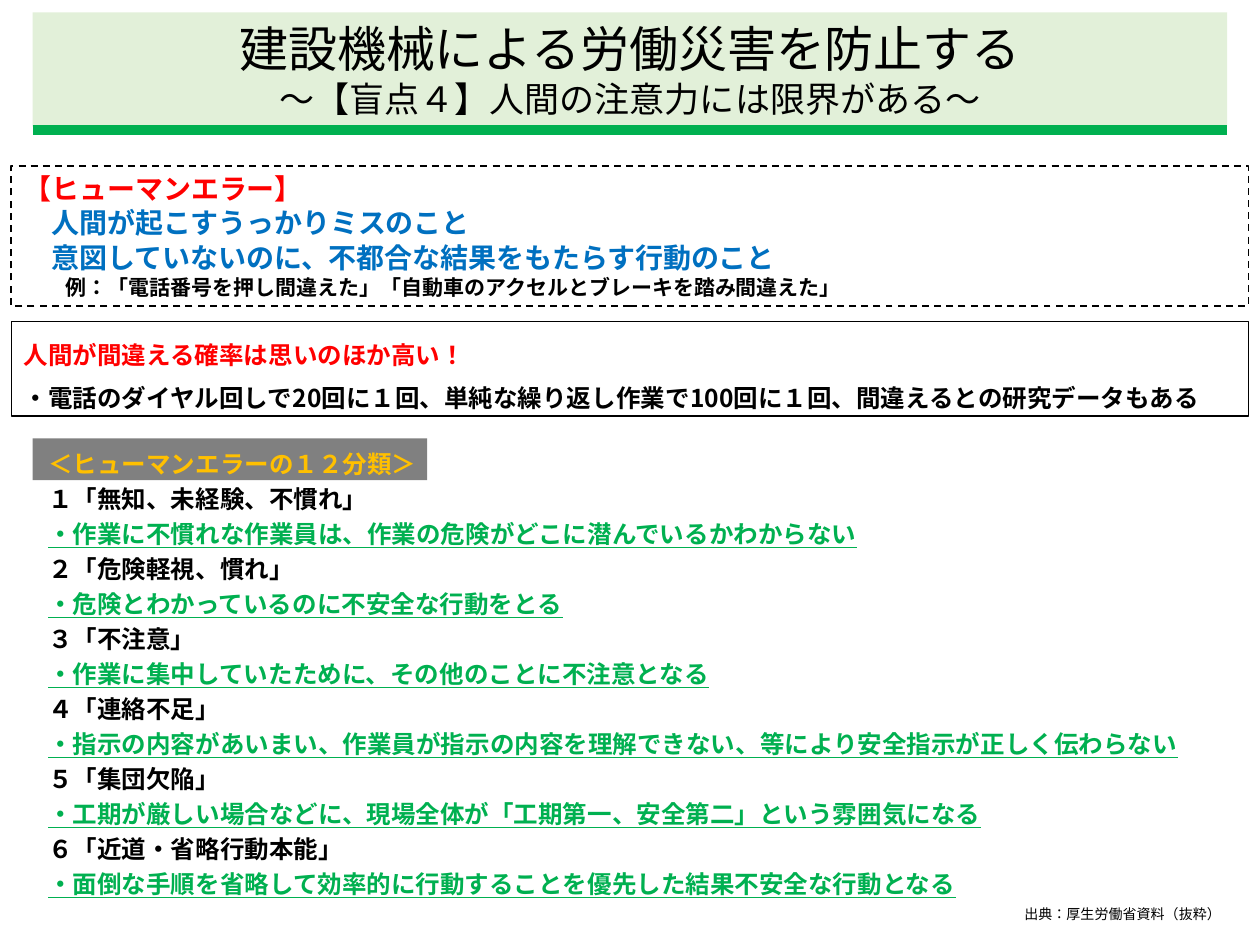
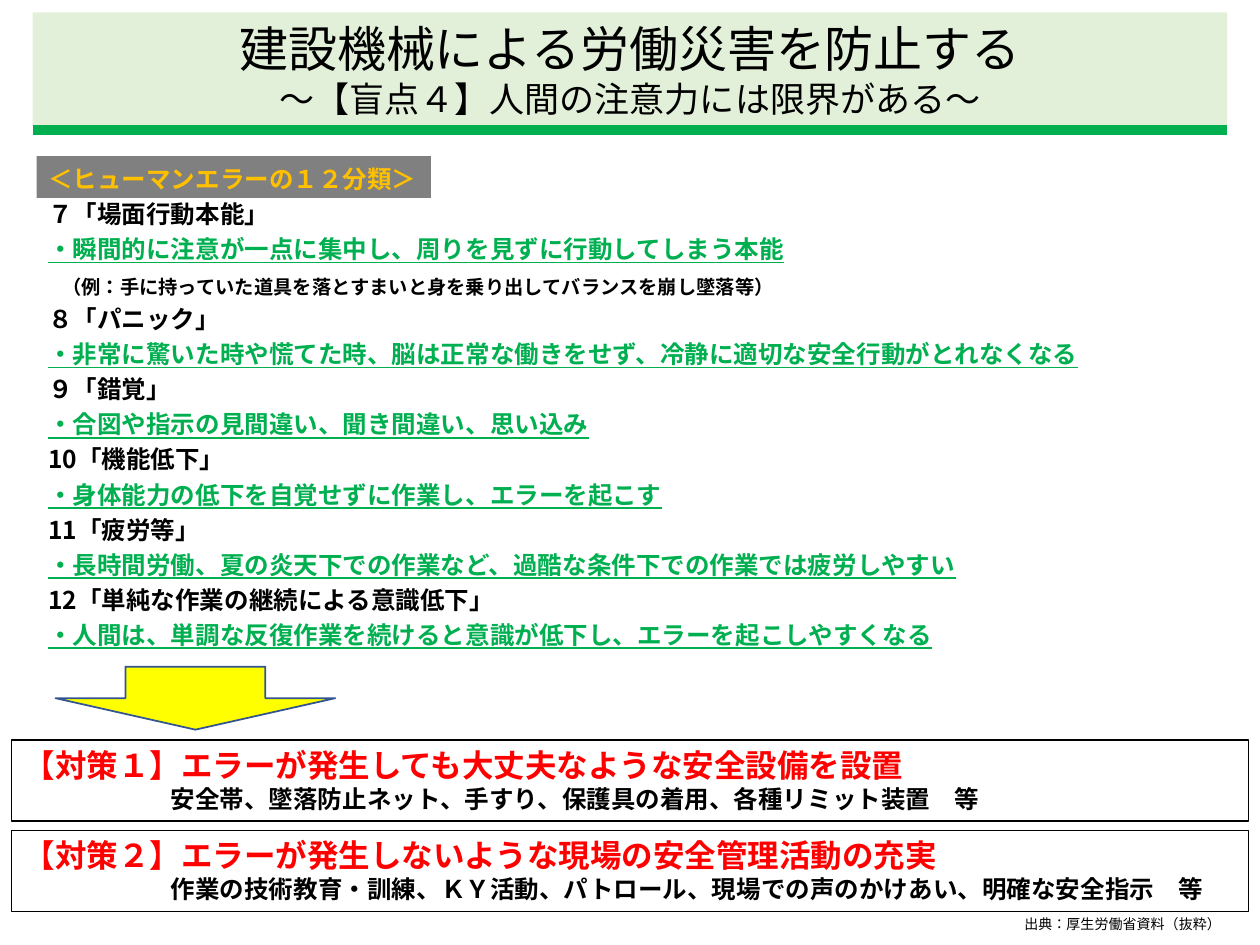
from dataclasses import dataclass

from pptx import Presentation
from pptx.dml.color import RGBColor
from pptx.enum.dml import MSO_LINE
from pptx.enum.lang import MSO_LANGUAGE_ID as Language
from pptx.enum.shapes import MSO_CONNECTOR, MSO_SHAPE as Preset
from pptx.enum.text import MSO_ANCHOR, PP_ALIGN as Align
from pptx.oxml.ns import qn
from pptx.util import Cm, Pt


@dataclass(frozen=True)
class Theme:
    """Colours, type sizes and spacing shared by both slides."""
    font: str = "Noto Sans CJK JP"
    black: str = "000000"
    red: str = "FF0000"
    blue: str = "0070C0"
    green: str = "00B050"
    gold: str = "FFC000"
    grey: str = "808080"
    pale: str = "E2F0D9"
    yellow: str = "FFFF00"
    navy: str = "325491"
    title: int = 28
    subtitle: int = 20
    measure: int = 18
    term: int = 16
    body: int = 14
    example: int = 12
    note: int = 11
    source: int = 8
    leading: float = 1.22
    wide_leading: float = 1.75
    list_pitch: int = 20
    top_inset: float = 0.1
    box_left: float = 0.23
    box_width: float = 24.94


@dataclass(frozen=True)
class Line:
    """A paragraph; indent counts characters and pitch is in points."""
    text: str
    size: int
    color: str = "000000"
    indent: int = 0
    bold: bool = True
    underline: bool = False
    pitch: float = 0
    align: Align = Align.LEFT


THEME = Theme()

ERRORS_1_TO_6 = [
    ("１「無知、未経験、不慣れ」", "・作業に不慣れな作業員は、作業の危険がどこに潜んでいるかわからない"),
    ("２「危険軽視、慣れ」", "・危険とわかっているのに不安全な行動をとる"),
    ("３「不注意」", "・作業に集中していたために、その他のことに不注意となる"),
    ("４「連絡不足」",
     "・指示の内容があいまい、作業員が指示の内容を理解できない、等により安全指示が正しく伝わらない"),
    ("５「集団欠陥」", "・工期が厳しい場合などに、現場全体が「工期第一、安全第二」という雰囲気になる"),
    ("６「近道・省略行動本能」", "・面倒な手順を省略して効率的に行動することを優先した結果不安全な行動となる"),
]
ERRORS_7_TO_12 = [
    ("７「場面行動本能」", "・瞬間的に注意が一点に集中し、周りを見ずに行動してしまう本能",
     "（例：手に持っていた道具を落とすまいと身を乗り出してバランスを崩し墜落等）"),
    ("８「パニック」", "・非常に驚いた時や慌てた時、脳は正常な働きをせず、冷静に適切な安全行動がとれなくなる"),
    ("９「錯覚」", "・合図や指示の見間違い、聞き間違い、思い込み"),
    ("10「機能低下」", "・身体能力の低下を自覚せずに作業し、エラーを起こす"),
    ("11「疲労等」", "・長時間労働、夏の炎天下での作業など、過酷な条件下での作業では疲労しやすい"),
    ("12「単純な作業の継続による意識低下」", "・人間は、単調な反復作業を続けると意識が低下し、エラーを起こしやすくなる"),
]
MEASURES = [
    ("【対策１】エラーが発生しても大丈夫なような安全設備を設置",
     "安全帯、墜落防止ネット、手すり、保護具の着用、各種リミット装置　等"),
    ("【対策２】エラーが発生しないような現場の安全管理活動の充実",
     "作業の技術教育・訓練、ＫＹ活動、パトロール、現場での声のかけあい、明確な安全指示　等"),
]


def rgb(color):
    """Turn a hex string into a colour."""
    return RGBColor.from_string(color)


def write_lines(holder, lines):
    """Fill a shape or text box with formatted lines."""
    frame = holder.text_frame
    frame.word_wrap = True
    frame.vertical_anchor = MSO_ANCHOR.TOP
    frame.margin_top = Cm(THEME.top_inset)
    frame.text = "\n".join(line.text for line in lines)
    for paragraph, line in zip(frame.paragraphs, lines):
        paragraph.alignment = line.align
        paragraph.line_spacing = Pt(line.pitch or line.size * THEME.leading)
        properties = paragraph._p.get_or_add_pPr()
        properties.set("marL", str(Pt(line.indent * line.size)))
        properties.set("indent", "0")
        for run in paragraph.runs:
            font = run.font
            font.name, font.size = THEME.font, Pt(line.size)
            font.bold, font.underline = line.bold, line.underline
            font.color.rgb = rgb(line.color)
            font.language_id = Language.JAPANESE
            east_asian = run._r.get_or_add_rPr().makeelement(
                qn("a:ea"), {"typeface": THEME.font})
            font._element.find(qn("a:latin")).addnext(east_asian)


def add_block(slide, preset, left, top, width, height, fill=None, outline=None, weight=0.75):
    """Add a preset shape with optional fill and outline."""
    block = slide.shapes.add_shape(preset, Cm(left), Cm(top), Cm(width), Cm(height))
    block.shadow.inherit = False
    if fill:
        block.fill.solid()
        block.fill.fore_color.rgb = rgb(fill)
    else:
        block.fill.background()
    if outline:
        block.line.color.rgb = rgb(outline)
        block.line.width = Pt(weight)
    else:
        block.line.fill.background()
    return block


def add_framed_box(slide, top, height, lines, weight=0.75):
    """Add a full-width outlined box with text."""
    box = add_block(slide, Preset.RECTANGLE, THEME.box_left, top, THEME.box_width, height,
                    outline=THEME.black, weight=weight)
    write_lines(box, lines)
    return box


def add_text(slide, left, top, width, height, lines):
    """Add a text box."""
    box = slide.shapes.add_textbox(Cm(left), Cm(top), Cm(width), Cm(height))
    write_lines(box, lines)


def add_header(slide):
    """Add the title band and its green rule."""
    left, width, rule_top = 0.66, 24.08, 2.62
    band = add_block(slide, Preset.RECTANGLE, left, 0.25, width, 2.31, fill=THEME.pale)
    write_lines(band, [
        Line("建設機械による労働災害を防止する", THEME.title, bold=False, align=Align.CENTER),
        Line("～【盲点４】人間の注意力には限界がある～", THEME.subtitle, bold=False,
             align=Align.CENTER)])
    rule = slide.shapes.add_connector(MSO_CONNECTOR.STRAIGHT, Cm(left), Cm(rule_top),
                                      Cm(left + width), Cm(rule_top))
    rule.line.color.rgb = rgb(THEME.green)
    rule.line.width = Pt(5.5)
    properties = rule._element.spPr
    properties.append(properties.makeelement(qn("a:effectLst"), {}))


def add_error_list(slide, tag_left, tag_top, list_top, height, errors):
    """Add the tagged heading and the list of error types."""
    add_block(slide, Preset.RECTANGLE, tag_left, tag_top, 7.95, 0.84, fill=THEME.grey)
    pitch = THEME.list_pitch
    lines = [Line("＜ヒューマンエラーの１２分類＞", THEME.body, THEME.gold, 1, pitch=pitch)]
    for name, detail, *examples in errors:
        lines.append(Line(name, THEME.body, indent=1, pitch=pitch))
        lines.append(Line(detail, THEME.body, THEME.green, 1, underline=True, pitch=pitch))
        lines += [Line(example, THEME.note, indent=2, pitch=pitch) for example in examples]
    add_text(slide, THEME.box_left, list_top, THEME.box_width, height, lines)


def add_source(slide, top):
    """Add the source credit."""
    add_text(slide, 20.4, top, 4.75, 0.6,
             [Line("出典：厚生労働省資料（抜粋）", THEME.source, bold=False)])


def build_definition_slide(slide):
    """Explain human error and list types 1 to 6."""
    add_error_list(slide, 0.66, 8.84, 8.84, 9.42, ERRORS_1_TO_6)
    add_header(slide)
    definition = add_framed_box(slide, 3.35, 2.82, [
        Line("【ヒューマンエラー】", THEME.term, THEME.red),
        Line("人間が起こすうっかりミスのこと", THEME.term, THEME.blue, 1),
        Line("意図していないのに、不都合な結果をもたらす行動のこと", THEME.term, THEME.blue, 1),
        Line("例：「電話番号を押し間違えた」「自動車のアクセルとブレーキを踏み間違えた」",
             THEME.example, indent=2)], weight=1)
    definition.line.dash_style = MSO_LINE.DASH
    pitch = THEME.body * THEME.wide_leading
    add_framed_box(slide, 6.48, 1.91, [
        Line("人間が間違える確率は思いのほか高い！", THEME.body, THEME.red, pitch=pitch),
        Line("・電話のダイヤル回しで20回に１回、単純な繰り返し作業で100回に１回、"
             "間違えるとの研究データもある", THEME.body, pitch=pitch)])
    add_source(slide, 18.14)


def build_measures_slide(slide):
    """List types 7 to 12 and the two measures."""
    add_error_list(slide, 0.74, 3.15, 3.1, 10.13, ERRORS_7_TO_12)
    add_header(slide)
    add_block(slide, Preset.DOWN_ARROW, 1.12, 13.44, 5.64, 1.27,
              fill=THEME.yellow, outline=THEME.navy, weight=1)
    for index, (measure, examples) in enumerate(MEASURES):
        add_framed_box(slide, 14.92 + index * 1.82, 1.63, [
            Line(measure, THEME.measure, THEME.red),
            Line(examples, THEME.body, indent=6)])
    add_source(slide, 18.36)


def main():
    """Build and save the deck."""
    deck = Presentation()
    deck.slide_width, deck.slide_height = Cm(25.4), Cm(19.05)
    for build in (build_definition_slide, build_measures_slide):
        build(deck.slides.add_slide(deck.slide_layouts[6]))
    deck.save("out.pptx")


if __name__ == "__main__":
    main()
